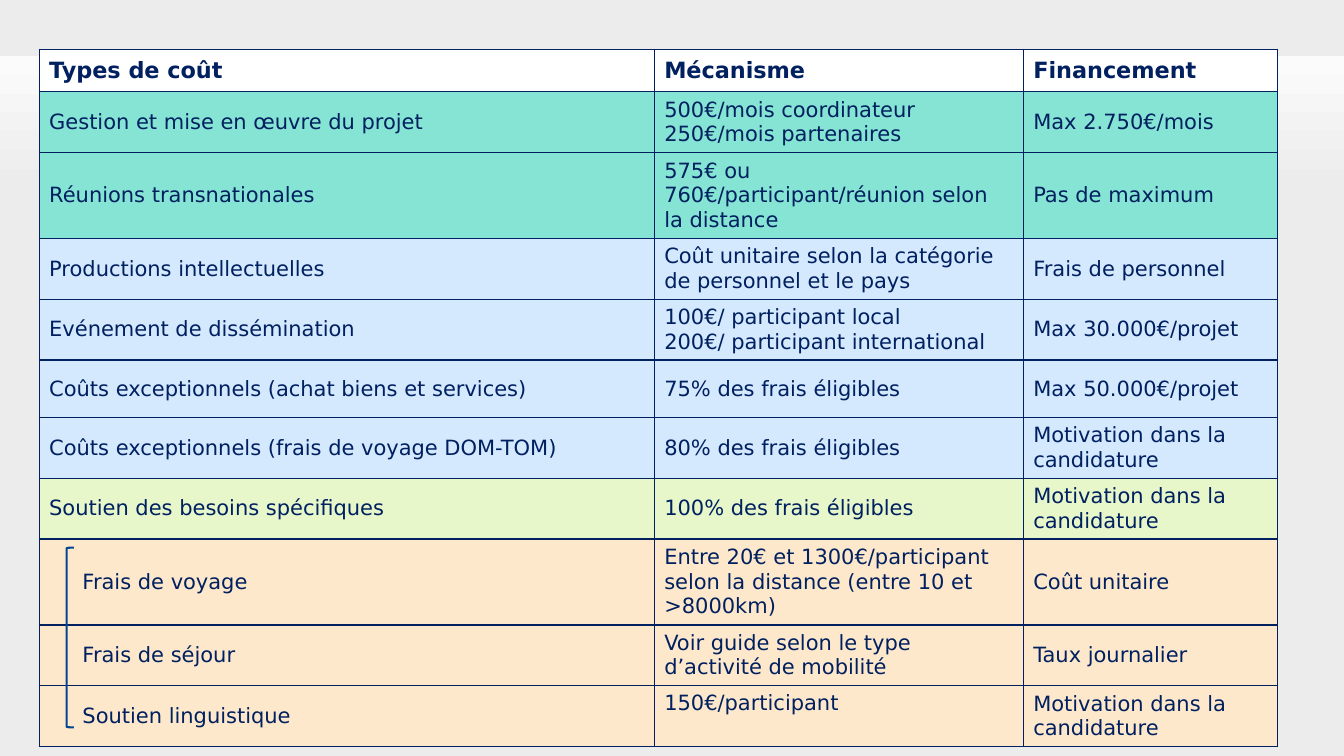
from lxml.etree import SubElement
from pptx import Presentation
from pptx.dml.color import RGBColor
from pptx.enum.shapes import MSO_SHAPE
from pptx.enum.text import MSO_ANCHOR
from pptx.oxml.ns import qn
from pptx.util import Cm, Pt

COLORS = {
    "background": "ECECEC", "band": "FBFBFB", "text": "002060", "bracket": "024690",
    "header": "FFFFFF", "project": "86E4D4", "output": "D4E8FE",
    "needs": "E7F7CA", "mobility": "FEE8CB",
}
FONT = "DejaVu Sans"
HEADER = ("Types de coût", "Mécanisme", "Financement")
# cost group, number of text lines, cells
COSTS = [
    ("project", 2, ("Gestion et mise en œuvre du projet",
                    "500€/mois coordinateur\n250€/mois partenaires", "Max 2.750€/mois")),
    ("project", 3, ("Réunions transnationales",
                    "575€ ou 760€/participant/réunion selon la distance", "Pas de maximum")),
    ("output", 2, ("Productions intellectuelles",
                   "Coût unitaire selon la catégorie de personnel et le pays",
                   "Frais de personnel")),
    ("output", 2, ("Evénement de dissémination",
                   "100€/ participant local\n200€/ participant international",
                   "Max 30.000€/projet")),
    ("output", 1, ("Coûts exceptionnels (achat biens et services)",
                   "75% des frais éligibles", "Max 50.000€/projet")),
    ("output", 2, ("Coûts exceptionnels (frais de voyage DOM-TOM)",
                   "80% des frais éligibles", "Motivation dans la candidature")),
    ("needs", 2, ("Soutien des besoins spécifiques",
                  "100% des frais éligibles", "Motivation dans la candidature")),
    ("mobility", 3, ("Frais de voyage",
                     "Entre 20€ et 1300€/participant selon la distance (entre 10 et >8000km)",
                     "Coût unitaire")),
    ("mobility", 2, ("Frais de séjour",
                     "Voir guide selon le type d’activité de mobilité", "Taux journalier")),
    ("mobility", 2, ("Soutien linguistique",
                     "150€/participant", "Motivation dans la candidature")),
]
COLUMN_WIDTHS = (15.5, 9.3, 6.4)
HEADER_HEIGHT = 1.07
HEIGHT_BY_LINES = {1: 1.45, 2: 1.53, 3: 2.17}
TABLE_LEFT, TABLE_TOP = 0.99, 1.24
CELL_MARGIN, MOBILITY_INDENT = 0.25, 0.84
BAND_TOP, BAND_HEIGHT = 1.42, 3.3


def rgb(name):
    return RGBColor.from_string(COLORS[name])


def add_borders(cell):
    properties = cell._tc.get_or_add_tcPr()
    for position, side in enumerate(("lnL", "lnR", "lnT", "lnB")):
        border = properties.makeelement(qn(f"a:{side}"), {"w": str(Pt(1))})
        fill = SubElement(border, qn("a:solidFill"))
        SubElement(fill, qn("a:srgbClr"), val=COLORS["text"])
        properties.insert(position, border)


def fill_cell(cell, wording, group):
    cell.text_frame.text = wording
    cell.vertical_anchor = MSO_ANCHOR.MIDDLE
    cell.margin_left = Cm(CELL_MARGIN)
    cell.fill.solid()
    cell.fill.fore_color.rgb = rgb(group)
    for paragraph in cell.text_frame.paragraphs:
        for run in paragraph.runs:
            run.font.name = FONT
            run.font.size = Pt(16 if group == "header" else 15)
            run.font.bold = group == "header"
            run.font.color.rgb = rgb("text")
    add_borders(cell)


def add_band(slide, width):
    band = slide.shapes.add_shape(MSO_SHAPE.RECTANGLE, 0, Cm(BAND_TOP), width, Cm(BAND_HEIGHT))
    band.shadow.inherit = False
    band.line.fill.background()
    band.fill.gradient()
    band.fill.gradient_angle = 270
    for stop, color in zip(band.fill.gradient_stops, ("band", "background")):
        stop.color.rgb = rgb(color)


def add_cost_table(slide):
    rows = [("header", HEADER_HEIGHT, HEADER)]
    rows += [(group, HEIGHT_BY_LINES[lines], cells) for group, lines, cells in COSTS]
    table = slide.shapes.add_table(
        len(rows), len(HEADER), Cm(TABLE_LEFT), Cm(TABLE_TOP),
        Cm(sum(COLUMN_WIDTHS)), Cm(sum(height for _, height, _ in rows))).table
    table.first_row = table.horz_banding = False
    for column, width in zip(table.columns, COLUMN_WIDTHS):
        column.width = Cm(width)
    for row, (group, height, wordings) in zip(table.rows, rows):
        row.height = Cm(height)
        for cell, wording in zip(row.cells, wordings):
            fill_cell(cell, wording, group)
        if group == "mobility":
            row.cells[0].margin_left = Cm(CELL_MARGIN + MOBILITY_INDENT)
    table.cell(len(rows) - 1, 1).vertical_anchor = MSO_ANCHOR.TOP


def add_mobility_bracket(slide):
    bracket = slide.shapes.add_shape(
        MSO_SHAPE.LEFT_BRACKET, Cm(1.68), Cm(13.8), Cm(0.18), Cm(4.53))
    bracket.shadow.inherit = False
    bracket.fill.background()
    bracket.line.color.rgb = rgb("bracket")
    bracket.line.width = Pt(1.5)


def main():
    presentation = Presentation()
    presentation.slide_width, presentation.slide_height = Cm(33.87), Cm(19.05)
    slide = presentation.slides.add_slide(presentation.slide_layouts[6])
    slide.background.fill.solid()
    slide.background.fill.fore_color.rgb = rgb("background")
    add_band(slide, presentation.slide_width)
    add_cost_table(slide)
    add_mobility_bracket(slide)
    presentation.save("out.pptx")


if __name__ == "__main__":
    main()
